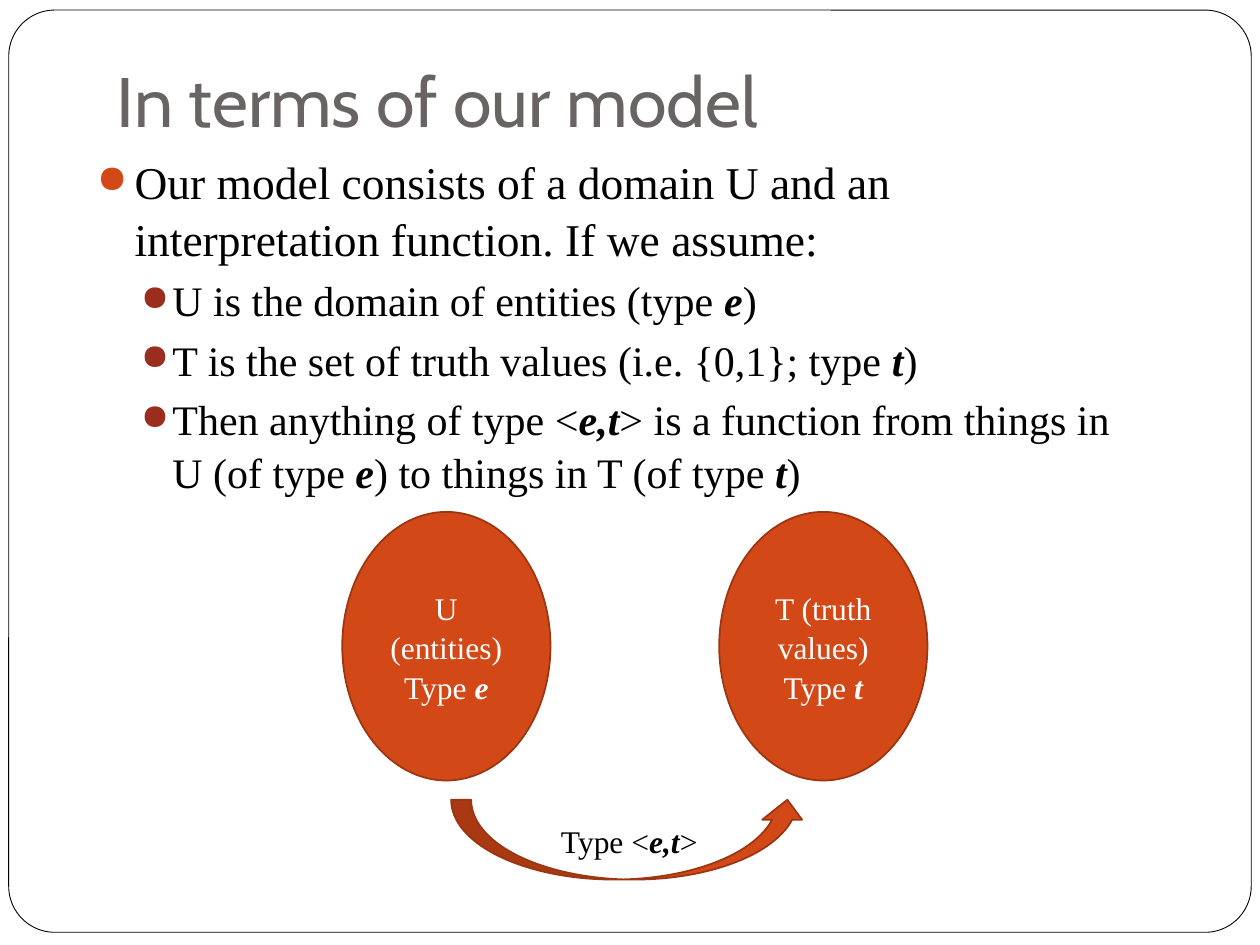
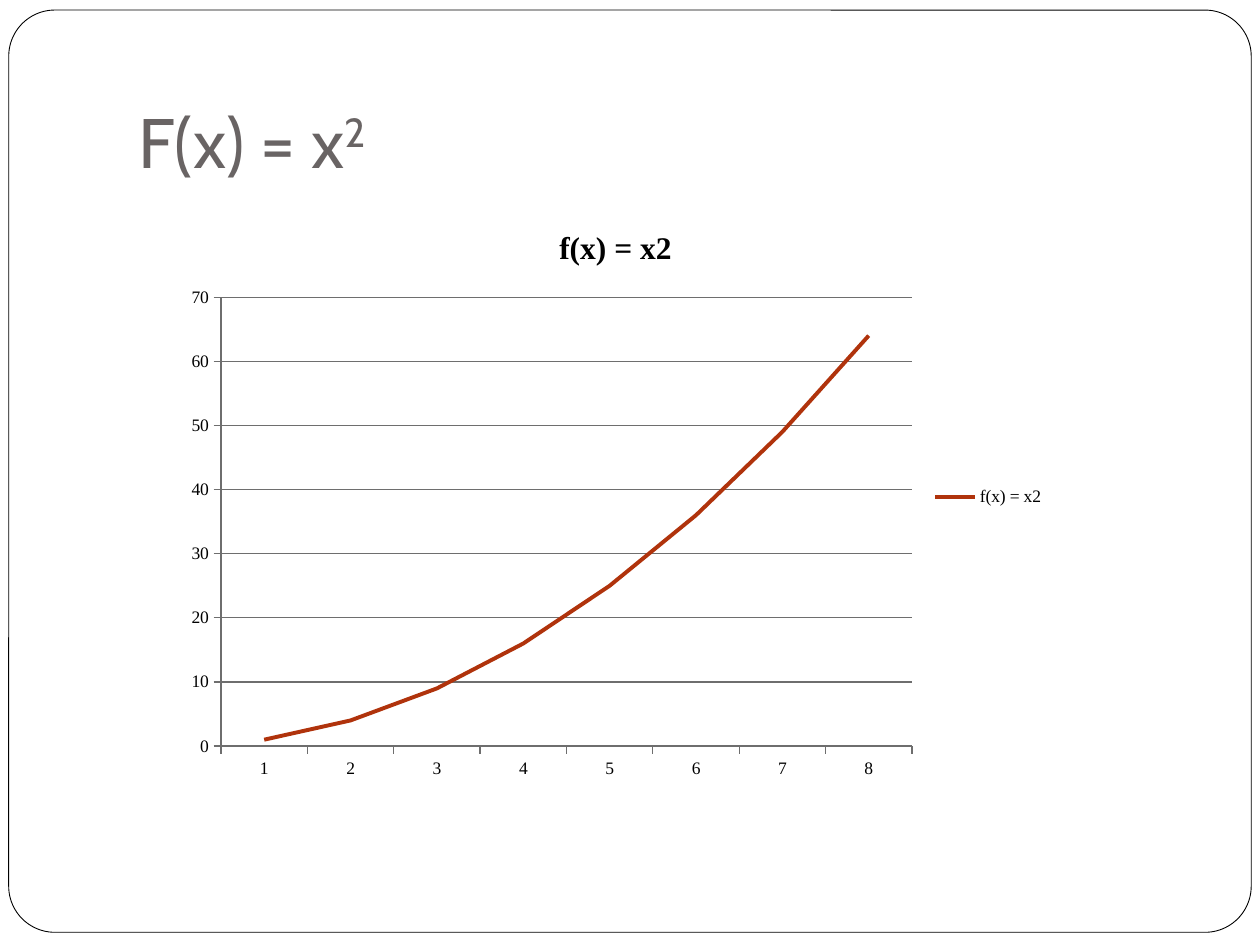
from dataclasses import dataclass
from typing import Any

from lxml import etree
from pptx import Presentation
from pptx.chart.data import CategoryChartData
from pptx.dml.color import RGBColor
from pptx.enum.chart import XL_CHART_TYPE, XL_LEGEND_POSITION, XL_MARKER_STYLE, XL_TICK_MARK
from pptx.enum.shapes import MSO_SHAPE
from pptx.enum.text import MSO_ANCHOR, PP_ALIGN
from pptx.oxml.ns import qn
from pptx.util import Pt

LINE_CHART = XL_CHART_TYPE.LINE
LEGEND_RIGHT = XL_LEGEND_POSITION.RIGHT
NO_MARKER = XL_MARKER_STYLE.NONE
TICK_OUTSIDE = XL_TICK_MARK.OUTSIDE
ROUNDED, ELLIPSE, CURVED_ARROW = (
    MSO_SHAPE.ROUNDED_RECTANGLE, MSO_SHAPE.OVAL, MSO_SHAPE.CURVED_UP_ARROW)
TOP, MIDDLE, BOTTOM = MSO_ANCHOR.TOP, MSO_ANCHOR.MIDDLE, MSO_ANCHOR.BOTTOM
CENTER = PP_ALIGN.CENTER

COLORS = {
    "background": "FFFFFF",
    "text": "000000",
    "title": "696464",
    "accent": "D34817",
    "outline": "9C3511",
    "sub_bullet": "9B2D1F",
    "curve": "B0330C",
    "grid": "6E6E6E",
}
TITLE_FONT = "Cabin"
BODY_FONT = "Times New Roman"
LINE_SPACING = 1.05
DIAGRAM_SIZE = 18


@dataclass(frozen=True)
class Box:
    left: float
    top: float
    width: float
    height: float

    def lengths(self) -> tuple[Pt, Pt, Pt, Pt]:
        return Pt(self.left), Pt(self.top), Pt(self.width), Pt(self.height)


@dataclass(frozen=True)
class Run:
    text: str
    emphasis: bool = False
    superscript: bool = False


@dataclass(frozen=True)
class BulletStyle:
    level: int
    size: float
    indent: float
    hanging: float
    space_before: float
    color: str


@dataclass(frozen=True)
class Bullet:
    style: BulletStyle
    runs: list[Run]


@dataclass(frozen=True)
class Figure:
    """A filled diagram shape with centred lines of text."""
    kind: Any
    box: Box
    text_color: str
    lines: list[list[Run]]


MAIN = BulletStyle(0, 26, 21.6, 21.6, 5.8, "accent")
SUB = BulletStyle(1, 24, 43.2, 18, 3.7, "sub_bullet")

FRAME = Box(5, 5.75, 710, 527)
MODEL_TITLE = Box(59.75, -2.15, 612, 90)
MODEL_BODY = Box(48.25, 82.8, 612, 360)
SQUARE_TITLE = Box(72, 21.6, 612, 90)
CHART_BOX = Box(99.35, 116.65, 504.7, 334.8)

MODEL_BULLETS = [
    Bullet(MAIN, [Run("Our model consists of a domain U and an interpretation function. "
                      "If we assume:")]),
    Bullet(SUB, [Run("U is the domain of entities (type "), Run("e", True), Run(")")]),
    Bullet(SUB, [Run("T is the set of truth values (i.e. {0,1}; type "),
                 Run("t", True), Run(")")]),
    Bullet(SUB, [Run("Then anything of type <"), Run("e,t", True),
                 Run("> is a function from things in U (of type "), Run("e", True),
                 Run(") to things in T (of type "), Run("t", True), Run(")")]),
]
FIGURES = [
    Figure(ELLIPSE, Box(195.6, 292.5, 119, 153.5), "background",
           [[Run("U")], [Run("(entities)")], [Run("Type "), Run("e", True)]]),
    Figure(ELLIPSE, Box(411, 292.5, 119, 153.5), "background",
           [[Run("T (truth values)")], [Run("Type "), Run("t", True)]]),
    Figure(CURVED_ARROW, Box(257.8, 457, 203.5, 45.6), "text",
           [[Run("Type <"), Run("e,t", True), Run(">")]]),
]


def rgb(name: str) -> RGBColor:
    return RGBColor.from_string(COLORS[name])


def apply_format(target: Any, values: dict[str, Any]) -> None:
    for name, value in values.items():
        setattr(target, name, value)


def style_font(font: Any, name: str, size: float, color: str, **extra: Any) -> None:
    apply_format(font, {"name": name, "size": Pt(size), **extra})
    font.color.rgb = rgb(color)


def style_line(line: Any, color: str, width: float) -> None:
    line.color.rgb = rgb(color)
    line.width = Pt(width)


def add_runs(paragraph: Any, runs: list[Run], font: str, size: float, color: str) -> None:
    for item in runs:
        run = paragraph.add_run()
        run.text = item.text
        style_font(run.font, font, size, color, bold=item.emphasis, italic=item.emphasis)
        if item.superscript:
            run.font._element.set("baseline", "30000")


def paragraph_at(frame: Any, index: int) -> Any:
    return frame.paragraphs[0] if index == 0 else frame.add_paragraph()


def add_shape(slide: Any, kind: Any, box: Box, fill: str, line: str, width: float) -> Any:
    shape = slide.shapes.add_shape(kind, *box.lengths())
    shape.shadow.inherit = False
    shape.fill.solid()
    shape.fill.fore_color.rgb = rgb(fill)
    style_line(shape.line, line, width)
    return shape


def add_text_frame(slide: Any, box: Box, anchor: Any, bottom: float) -> Any:
    frame = slide.shapes.add_textbox(*box.lengths()).text_frame
    apply_format(frame, {
        "word_wrap": True, "vertical_anchor": anchor,
        "margin_left": Pt(7.2), "margin_right": Pt(7.2),
        "margin_top": Pt(3.6), "margin_bottom": Pt(bottom),
    })
    return frame


def add_framed_slide(presentation: Any, title: list[Run], title_box: Box) -> Any:
    """Add a blank slide with the rounded border and its title."""
    slide = presentation.slides.add_slide(presentation.slide_layouts[6])
    border = add_shape(slide, ROUNDED, FRAME, "background", "text", 0.5)
    border.adjustments[0] = 0.05
    frame = add_text_frame(slide, title_box, BOTTOM, 7.2)
    add_runs(frame.paragraphs[0], title, TITLE_FONT, 40, "title")
    return slide


def set_bullet(paragraph: Any, style: BulletStyle) -> None:
    properties = paragraph._p.get_or_add_pPr()
    properties.set("marL", str(Pt(style.indent)))
    properties.set("indent", str(-Pt(style.hanging)))
    color = etree.SubElement(properties, qn("a:buClr"))
    etree.SubElement(color, qn("a:srgbClr"), val=COLORS[style.color])
    etree.SubElement(properties, qn("a:buSzPct"), val="85000")
    etree.SubElement(properties, qn("a:buChar"), char="●")


def add_bullets(slide: Any, box: Box, bullets: list[Bullet]) -> None:
    frame = add_text_frame(slide, box, TOP, 3.6)
    for index, bullet in enumerate(bullets):
        style = bullet.style
        paragraph = paragraph_at(frame, index)
        apply_format(paragraph, {"level": style.level, "line_spacing": LINE_SPACING,
                                 "space_before": Pt(style.space_before)})
        set_bullet(paragraph, style)
        add_runs(paragraph, bullet.runs, BODY_FONT, style.size, "text")


def add_figure(slide: Any, figure: Figure) -> None:
    shape = add_shape(slide, figure.kind, figure.box, "accent", "outline", 1)
    frame = shape.text_frame
    apply_format(frame, {"word_wrap": True, "vertical_anchor": MIDDLE})
    for index, runs in enumerate(figure.lines):
        paragraph = paragraph_at(frame, index)
        apply_format(paragraph, {"alignment": CENTER, "line_spacing": LINE_SPACING})
        add_runs(paragraph, runs, BODY_FONT, DIAGRAM_SIZE, figure.text_color)


def add_square_chart(slide: Any) -> None:
    name = "f(x) = x2"
    inputs = range(1, 9)
    data = CategoryChartData()
    data.categories = [str(x) for x in inputs]
    data.add_series(name, [x ** 2 for x in inputs])
    chart = slide.shapes.add_chart(LINE_CHART, *CHART_BOX.lengths(), data).chart
    style_font(chart.font, BODY_FONT, 10, "text")

    chart.has_title = True
    title = chart.chart_title.text_frame
    title.text = name
    style_font(title.paragraphs[0].runs[0].font, BODY_FONT, 18, "text", bold=True)

    chart.has_legend = True
    apply_format(chart.legend, {"position": LEGEND_RIGHT, "include_in_layout": False})

    for axis in (chart.category_axis, chart.value_axis):
        axis.major_tick_mark = TICK_OUTSIDE
        style_line(axis.format.line, "grid", 0.75)
    apply_format(chart.value_axis, {"minimum_scale": 0, "maximum_scale": 70,
                                    "major_unit": 10, "has_major_gridlines": True})
    style_line(chart.value_axis.major_gridlines.format.line, "grid", 0.75)

    plot = chart.plots[0]
    plot.vary_by_categories = False
    series = plot.series[0]
    series.smooth = False
    series.marker.style = NO_MARKER
    style_line(series.format.line, "curve", 2.25)


def build_model_slide(presentation: Any) -> None:
    slide = add_framed_slide(presentation, [Run("In terms of our model")], MODEL_TITLE)
    add_bullets(slide, MODEL_BODY, MODEL_BULLETS)
    for figure in FIGURES:
        add_figure(slide, figure)


def build_square_slide(presentation: Any) -> None:
    title = [Run("F(x) = x"), Run("2", superscript=True)]
    add_square_chart(add_framed_slide(presentation, title, SQUARE_TITLE))


def main() -> None:
    presentation = Presentation()
    apply_format(presentation, {"slide_width": Pt(720), "slide_height": Pt(540)})
    build_model_slide(presentation)
    build_square_slide(presentation)
    presentation.save("out.pptx")


if __name__ == "__main__":
    main()
